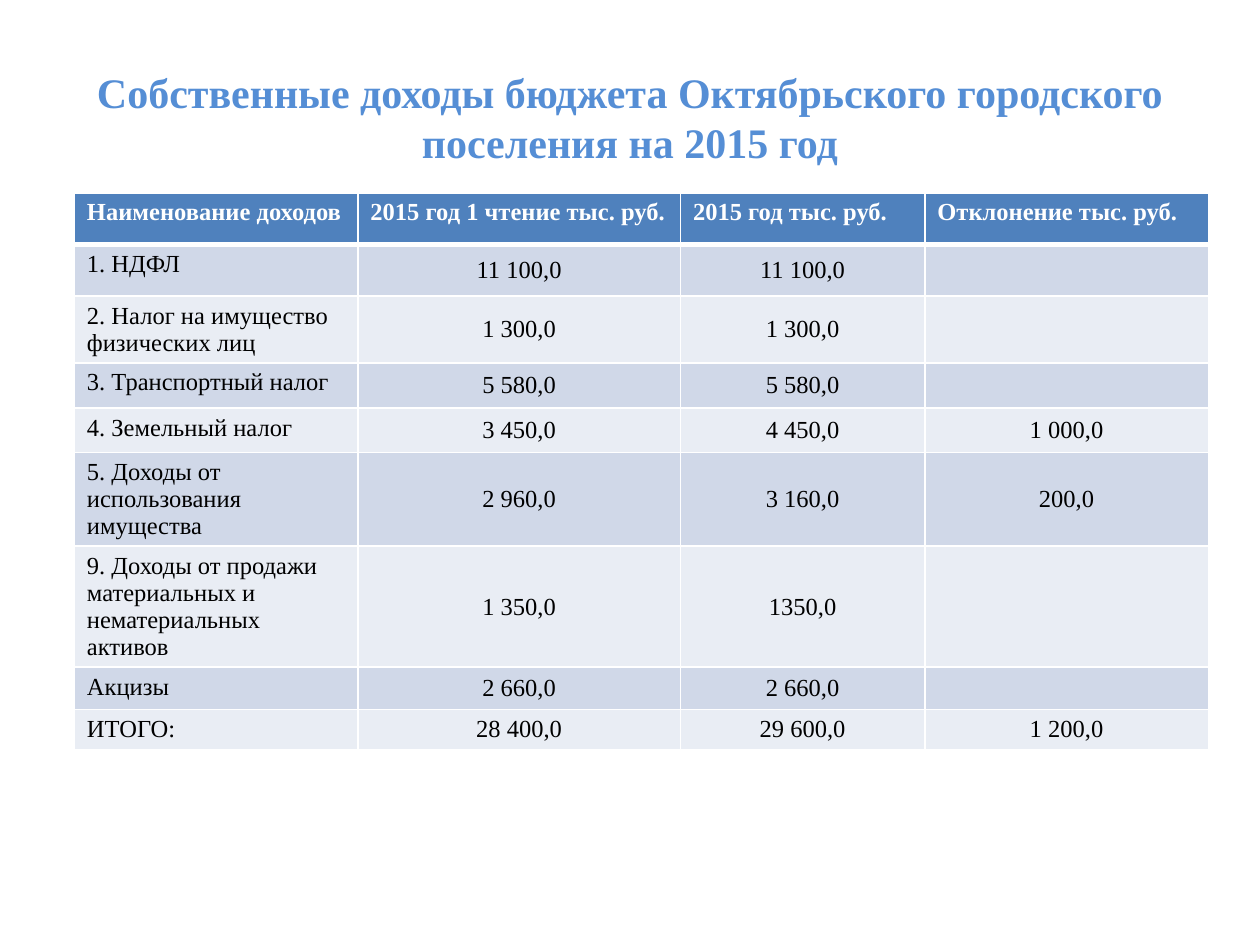
from dataclasses import dataclass

import pptx
import pptx.dml.color
import pptx.enum.text
import pptx.oxml.ns
import pptx.util
from lxml import etree

Inches = pptx.util.Inches
Pt = pptx.util.Pt
CENTER = pptx.enum.text.PP_ALIGN.CENTER
MIDDLE = pptx.enum.text.MSO_ANCHOR.MIDDLE


@dataclass(frozen=True)
class Theme:
    font: str = "Times New Roman"
    title_size: int = 24
    table_size: int = 14
    title: str = "558ED5"
    header_fill: str = "4F81BD"
    header_text: str = "FFFFFF"
    body_text: str = "000000"
    bands: tuple[str, str] = ("D0D8E8", "E9EDF4")
    border: str = "FFFFFF"


@dataclass(frozen=True)
class Income:
    name: str
    first_reading: str
    year: str
    deviation: str
    height: float

    def values(self) -> tuple[str, ...]:
        return self.name, self.first_reading, self.year, self.deviation


THEME = Theme()
TITLE = "Собственные доходы бюджета Октябрьского городского поселения на 2015 год"
COLUMN_WIDTHS = (2.25, 2.56, 1.94, 2.25)
ROWS = (
    Income("Наименование доходов", "2015 год 1 чтение тыс. руб.",
           "2015 год тыс. руб.", "Отклонение тыс. руб.", 0.41),
    Income("1. НДФЛ", "11 100,0", "11 100,0", "", 0.41),
    Income("2. Налог на имущество физических лиц", "1 300,0", "1 300,0", "", 0.41),
    Income("3. Транспортный налог", "5 580,0", "5 580,0", "", 0.36),
    Income("4. Земельный налог", "3 450,0", "4 450,0", "1 000,0", 0.35),
    Income("5. Доходы от использования имущества", "2 960,0", "3 160,0", "200,0", 0.41),
    Income("9. Доходы от продажи материальных и\nнематериальных активов",
           "1 350,0", "1350,0", "", 0.41),
    Income("Акцизы", "2 660,0", "2 660,0", "", 0.32),
    Income("ИТОГО:", "28 400,0", "29 600,0", "1 200,0", 0.31),
)


def rgb(value: str) -> pptx.dml.color.RGBColor:
    return pptx.dml.color.RGBColor.from_string(value)


def format_text(text_frame, size: int, color: str, bold: bool, centered: bool) -> None:
    for paragraph in text_frame.paragraphs:
        if centered:
            paragraph.alignment = CENTER
        for run in paragraph.runs:
            run.font.name = THEME.font
            run.font.size = Pt(size)
            run.font.bold = bold
            run.font.color.rgb = rgb(color)
        if not paragraph.runs:
            # An empty cell keeps the type size, so that its row stays low
            etree.SubElement(paragraph._p, pptx.oxml.ns.qn("a:endParaRPr"),
                             sz=str(size * 100))


def set_borders(cell, bottom_width: int) -> None:
    properties = cell._tc.get_or_add_tcPr()
    widths = {"a:lnL": 1, "a:lnR": 1, "a:lnT": 1, "a:lnB": bottom_width}
    for index, (tag, width) in enumerate(widths.items()):
        line = etree.Element(pptx.oxml.ns.qn(tag), w=str(Pt(width)))
        fill = etree.SubElement(line, pptx.oxml.ns.qn("a:solidFill"))
        etree.SubElement(fill, pptx.oxml.ns.qn("a:srgbClr"), val=THEME.border)
        properties.insert(index, line)


def add_title(slide) -> None:
    title = slide.shapes.title
    title.left, title.top = Inches(0.5), Inches(0.3)
    title.width, title.height = Inches(9), Inches(1.25)
    title.text_frame.text = TITLE
    title.text_frame.vertical_anchor = MIDDLE
    format_text(title.text_frame, THEME.title_size, THEME.title, True, True)


def fill_cell(cell, text: str, row: int, column: int) -> None:
    header = row == 0
    number = not header and column > 0
    cell.text_frame.text = text
    if number:
        cell.vertical_anchor = MIDDLE
    color = THEME.header_text if header else THEME.body_text
    format_text(cell.text_frame, THEME.table_size, color, header, number)
    cell.fill.solid()
    cell.fill.fore_color.rgb = rgb(
        THEME.header_fill if header else THEME.bands[(row - 1) % 2])
    set_borders(cell, 3 if header else 1)


def add_income_table(slide) -> None:
    frame = slide.shapes.add_table(
        len(ROWS), len(COLUMN_WIDTHS),
        Inches(0.59), Inches(1.53), Inches(9), Inches(4.59))
    table = frame.table
    for column, width in zip(table.columns, COLUMN_WIDTHS):
        column.width = Inches(width)
    for row, income in enumerate(ROWS):
        table.rows[row].height = Inches(income.height)
        for column, text in enumerate(income.values()):
            fill_cell(table.cell(row, column), text, row, column)
    frame.height = Inches(4.59)


def main() -> None:
    presentation = pptx.Presentation()
    presentation.slide_width = Inches(10)
    presentation.slide_height = Inches(7.5)
    slide = presentation.slides.add_slide(presentation.slide_layouts[5])
    add_title(slide)
    add_income_table(slide)
    presentation.save("out.pptx")


if __name__ == "__main__":
    main()
